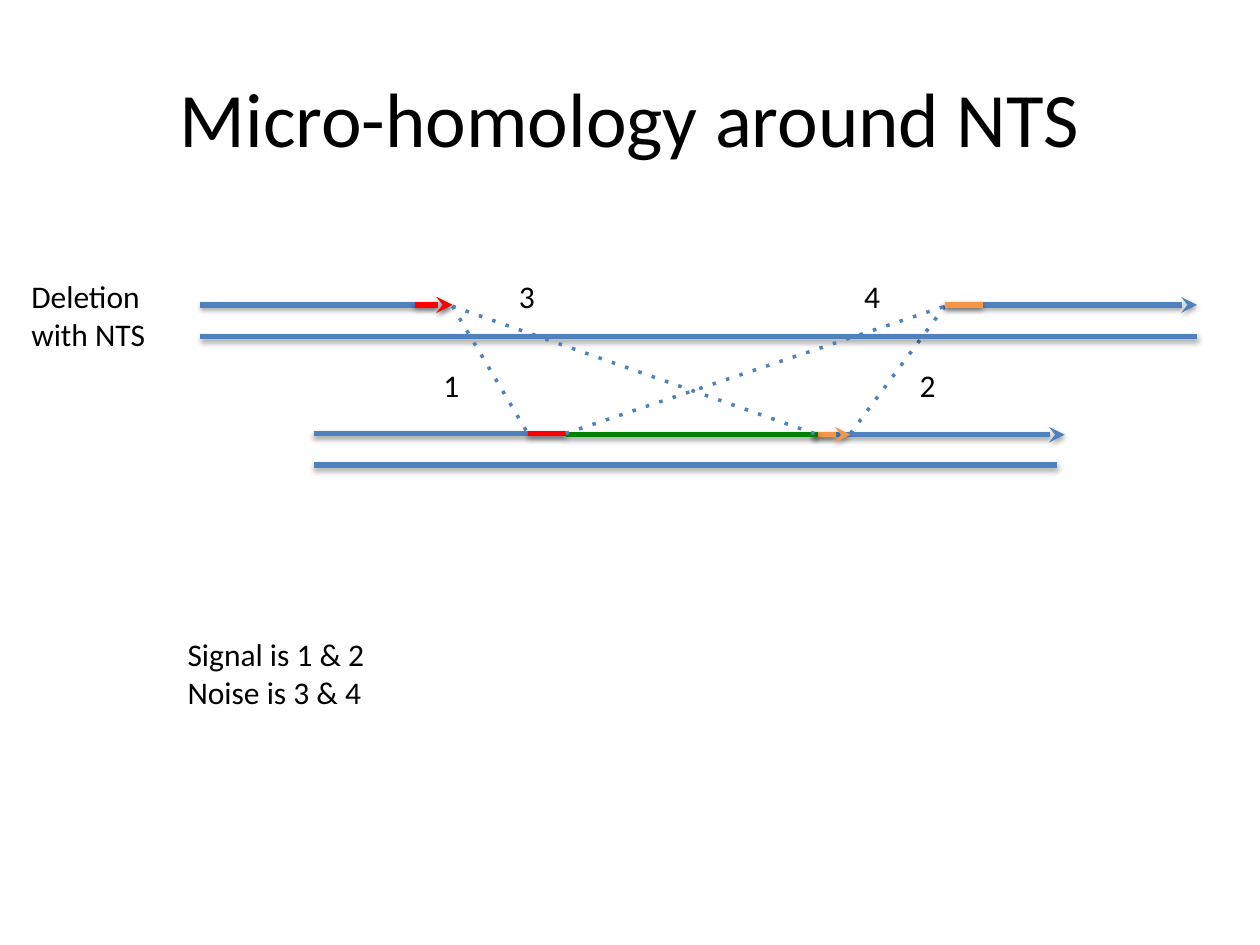
from dataclasses import dataclass

from lxml.etree import SubElement
from pptx import Presentation
from pptx.dml.color import RGBColor
from pptx.enum.shapes import MSO_CONNECTOR
from pptx.enum.text import MSO_ANCHOR, MSO_AUTO_SIZE, PP_ALIGN
from pptx.oxml.ns import qn
from pptx.util import Inches, Pt


@dataclass(frozen=True)
class Theme:
    font: str = "Calibri"
    title_size: int = 44
    label_size: int = 18
    text: str = "000000"
    strand: str = "4F81BD"
    left_end: str = "FF0000"
    right_end: str = "F79646"
    insert: str = "008000"
    strand_width: int = 3
    link_width: int = 2


theme = Theme()


def add_run(paragraph, text, size):
    run = paragraph.add_run()
    run.text = text
    run.font.name = theme.font
    run.font.size = Pt(size)
    run.font.color.rgb = RGBColor.from_string(theme.text)


def add_line(start, end, color, arrow=False, link=False):
    """Draw a shadowed strand, or a dotted link without shadow."""
    line = slide.shapes.add_connector(
        MSO_CONNECTOR.STRAIGHT, *(Inches(value) for value in start + end)
    )
    line.line.color.rgb = RGBColor.from_string(color)
    line.line.width = Pt(theme.link_width if link else theme.strand_width)
    properties = line._element.spPr
    outline = properties.find(qn("a:ln"))
    if link:
        SubElement(outline, qn("a:prstDash"), val="dot")
    if arrow:
        SubElement(outline, qn("a:tailEnd"), type="stealth")
    effects = SubElement(properties, qn("a:effectLst"))
    if not link:
        shadow = SubElement(
            effects, qn("a:outerShdw"), blurRad=str(Pt(3.1)), dist=str(Pt(1.6)),
            dir="5400000", rotWithShape="0",
        )
        shade = SubElement(shadow, qn("a:srgbClr"), val="000000")
        SubElement(shade, qn("a:alpha"), val="38000")


presentation = Presentation()
presentation.slide_width = Inches(10)
presentation.slide_height = Inches(7.5)
slide = presentation.slides.add_slide(presentation.slide_layouts[5])

title = slide.shapes.title
title.left, title.top = Inches(0.5), Inches(0.3)
title.width, title.height = Inches(9), Inches(1.25)
title.text_frame.vertical_anchor = MSO_ANCHOR.MIDDLE
title_paragraph = title.text_frame.paragraphs[0]
title_paragraph.alignment = PP_ALIGN.CENTER
add_run(title_paragraph, "Micro-homology around NTS", theme.title_size)

# Breakpoints on the reference (top) and on the read with the insert (bottom)
homology = 0.3
arm = 2
reference_y, read_y, joined_y = 2.42, 3.44, 3.45
left_break, right_break = 3.59, 7.5
insert_start, insert_end = 4.49, 6.49
right_arm = 6.45
link_y = 2.43
left_match = (insert_start - homology, read_y)
right_match = (right_arm + homology, read_y)

add_line(right_match, (right_break, link_y), theme.strand, link=True)

# Start, end, height, colour, arrow
reference_strands = [
    (left_break - arm, right_break + arm, 2.67, theme.strand, False),
    (left_break - arm, left_break, reference_y, theme.strand, True),
    (right_break, right_break + arm, reference_y, theme.strand, True),
    (left_break - homology, left_break, reference_y, theme.left_end, True),
    (right_break, right_break + homology, reference_y, theme.right_end, False),
]
read_strands = [
    (insert_start - arm, 8.39, 3.69, theme.strand, False),
    (insert_start - arm, insert_start, read_y, theme.strand, False),
    (right_arm, right_arm + arm, joined_y, theme.strand, True),
    (insert_start - homology, insert_start, read_y, theme.left_end, False),
    (right_arm, right_arm + homology, joined_y, theme.right_end, True),
    (insert_start, insert_end, joined_y, theme.insert, False),
]
for start, end, y, color, arrow in reference_strands:
    add_line((start, y), (end, y), color, arrow)
add_line((left_break, link_y), left_match, theme.strand, link=True)
for start, end, y, color, arrow in read_strands:
    add_line((start, y), (end, y), color, arrow)
add_line((left_break, link_y), (insert_end, joined_y), theme.strand, link=True)
add_line((insert_start, read_y), (right_break, link_y), theme.strand, link=True)

# Left, top, width, height, lines
labels = [
    (0.15, 2.15, 1.12, 0.71, ["Deletion", "with NTS"]),
    (3.42, 2.86, 0.33, 0.4, ["1"]),
    (7.2, 2.86, 0.33, 0.4, ["2"]),
    (4.02, 2.15, 0.33, 0.4, ["3"]),
    (6.76, 2.15, 0.33, 0.4, ["4"]),
    (1.39, 4.99, 1.62, 0.71, ["Signal is 1 & 2", "Noise is 3 & 4"]),
]
for *bounds, lines in labels:
    label = slide.shapes.add_textbox(*(Inches(value) for value in bounds))
    frame = label.text_frame
    frame.word_wrap = False
    frame.auto_size = MSO_AUTO_SIZE.SHAPE_TO_FIT_TEXT
    for index, text in enumerate(lines):
        paragraph = frame.add_paragraph() if index else frame.paragraphs[0]
        add_run(paragraph, text, theme.label_size)

presentation.save("out.pptx")
